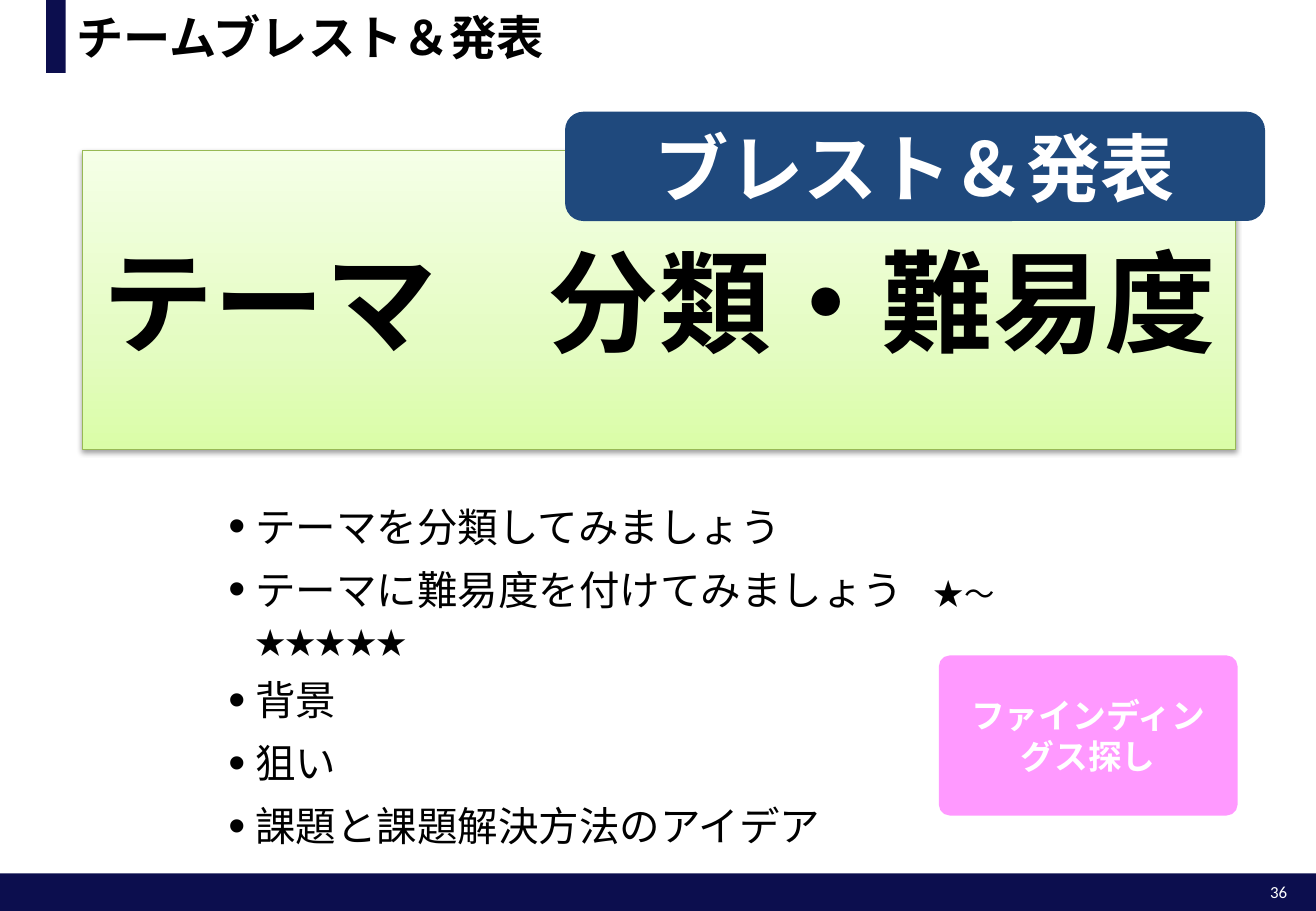
from lxml import etree
from pptx import Presentation, util as u
from pptx.dml.color import RGBColor
from pptx.enum import shapes, text
from pptx.oxml import parse_xml
from pptx.oxml.ns import nsdecls, qn

SLIDE_W, SLIDE_H = u.Inches(10.83), u.Inches(7.5)
JAPANESE = "Noto Sans CJK JP"
NAVY, BLUE, PINK, GREEN = "0C0E4E", "1F497D", "FF99FF", "98B955"
BLACK, WHITE = "000000", "FFFFFF"
THEME_GRADIENT = [(0, "DAFDA7"), (35, "E4FCC2"), (100, "F5FFE7")]
STEPS = [
    [("テーマを分類してみましょう", 24)],
    [("テーマに難易度を付けてみましょう", 24), ("　★～★★★★★", 18)],
    [("背景", 24)],
    [("狙い", 24)],
    [("課題と課題解決方法のアイデア", 24)],
]


def rgb(code):
    return RGBColor.from_string(code)


def area(left, top, width, height):
    """Turn percentages of the slide into a position and size."""
    return [int(size * share / 100) for size, share in
            zip((SLIDE_W, SLIDE_H) * 2, (left, top, width, height))]


def set_font(paragraph, size, color, bold=False, name=JAPANESE):
    font = paragraph.font
    font.size, font.bold, font.name = u.Pt(size), bold, name
    font.color.rgb = rgb(color)
    defaults = paragraph._p.pPr.find(qn("a:defRPr"))
    etree.SubElement(defaults, qn("a:ea"), typeface=JAPANESE)


def write(frame, words, size, color, align, bold=True, name=JAPANESE):
    """Fill a frame with one vertically centred paragraph."""
    frame.word_wrap = True
    frame.vertical_anchor = text.MSO_ANCHOR.MIDDLE
    paragraph = frame.paragraphs[0]
    paragraph.text, paragraph.alignment = words, align
    set_font(paragraph, size, color, bold, name)


def add_panel(slide, box, fill, rounded=False):
    kind = shapes.MSO_SHAPE.ROUNDED_RECTANGLE if rounded else shapes.MSO_SHAPE.RECTANGLE
    panel = slide.shapes.add_shape(kind, *area(*box))
    panel.shadow.inherit = False
    panel.fill.solid()
    panel.fill.fore_color.rgb = rgb(fill)
    panel.line.fill.background()
    return panel


def add_label(slide, box, fill, words, size, color=WHITE, rounded=True):
    label = add_panel(slide, box, fill, rounded)
    write(label.text_frame, words, size, color, text.PP_ALIGN.CENTER)
    return label


def outline(panel, color, width):
    panel.line.color.rgb = rgb(color)
    panel.line.width = u.Pt(width)


def shade(panel, stops):
    """Give a panel an upward gradient and a soft shadow below."""
    stop_xml = "".join(f'<a:gs pos="{pos * 1000}"><a:srgbClr val="{color}"/></a:gs>'
                       for pos, color in stops)
    gradient = parse_xml(f'<a:gradFill {nsdecls("a")} rotWithShape="1"><a:gsLst>{stop_xml}'
                         '</a:gsLst><a:lin ang="16200000" scaled="0"/></a:gradFill>')
    properties = panel._element.spPr
    properties.replace(properties.find(qn("a:solidFill")), gradient)
    shadow = etree.SubElement(properties.find(qn("a:effectLst")), qn("a:outerShdw"),
                              blurRad=str(u.Pt(3.1)), dist=str(u.Pt(1.6)),
                              dir="5400000", rotWithShape="0")
    tint = etree.SubElement(shadow, qn("a:srgbClr"), val=BLACK)
    etree.SubElement(tint, qn("a:alpha"), val="38000")


def add_bullets(slide, box, items):
    frame = slide.shapes.add_textbox(*area(*box)).text_frame
    frame.word_wrap = True
    frame.margin_left = frame.margin_right = u.Inches(0.12)
    frame.margin_top = frame.margin_bottom = u.Inches(0.08)
    indent = u.Inches(0.22)
    for index, parts in enumerate(items):
        paragraph = frame.add_paragraph() if index else frame.paragraphs[0]
        paragraph.line_spacing = 1.3
        properties = paragraph._p.get_or_add_pPr()
        properties.set("marL", str(indent))
        properties.set("indent", str(-indent))
        etree.SubElement(properties, qn("a:buSzPct"), val="120000")
        etree.SubElement(properties, qn("a:buFont"), typeface="Arial")
        etree.SubElement(properties, qn("a:buChar"), char="•")
        set_font(paragraph, parts[0][1], BLACK)
        for words, size in parts:
            run = paragraph.add_run()
            run.text, run.font.size = words, u.Pt(size)


def add_title(slide, box, words):
    title = slide.shapes.title
    title.left, title.top, title.width, title.height = area(*box)
    title.text_frame.auto_size = text.MSO_AUTO_SIZE.NONE
    write(title.text_frame, words, 28, BLACK, text.PP_ALIGN.LEFT, name="Arial")


def add_page_number(slide, box, number):
    frame = slide.shapes.add_textbox(*area(*box)).text_frame
    write(frame, number, 10, WHITE, text.PP_ALIGN.RIGHT, bold=False, name="Calibri")


def main():
    deck = Presentation()
    deck.slide_width, deck.slide_height = SLIDE_W, SLIDE_H
    slide = deck.slides.add_slide(deck.slide_layouts[5])

    add_panel(slide, (0, 95.87, 100, 4.13), NAVY)
    add_panel(slide, (3.51, 0, 1.48, 8), NAVY)
    add_page_number(slide, (94.92, 96.13, 3.79, 3.6), "36")
    add_title(slide, (4.89, 0, 93.81, 8), "チームブレスト＆発表")

    theme = add_label(slide, (6.28, 16.53, 87.63, 32.8), WHITE,
                      "テーマ　分類・難易度", 66, BLACK, rounded=False)
    outline(theme, GREEN, 0.75)
    shade(theme, THEME_GRADIENT)
    add_label(slide, (42.94, 12.27, 53.19, 12), BLUE, "ブレスト＆発表", 44)

    findings = add_label(slide, (71.47, 72.13, 22.44, 17.2), PINK,
                         "ファインディングス探し", 20)
    findings.adjustments[0] = 0.06
    outline(findings, PINK, 2)
    add_bullets(slide, (16.25, 52.4, 68.05, 36.8), STEPS)

    deck.save("out.pptx")


if __name__ == "__main__":
    main()
